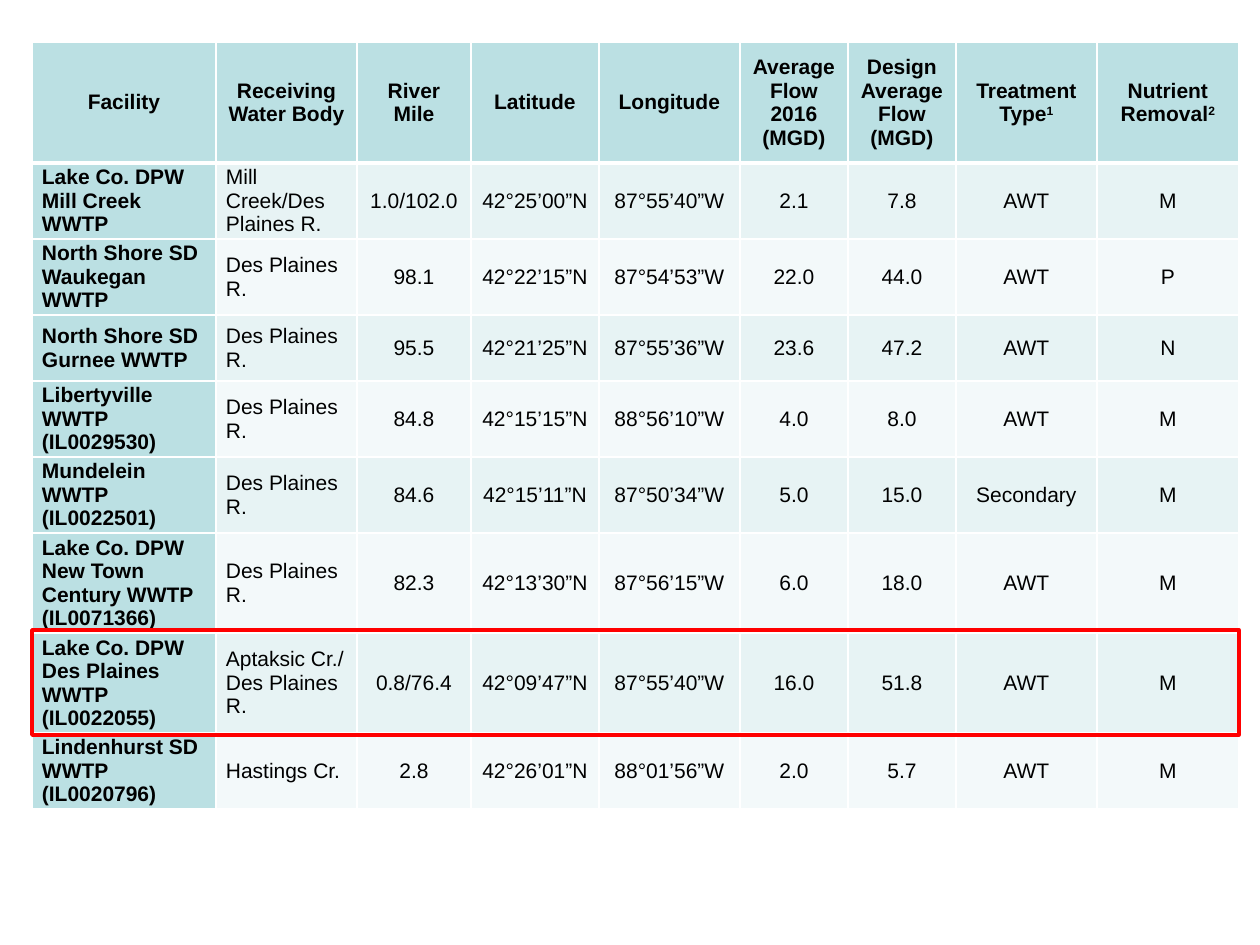
from typing import NamedTuple

from lxml import etree
from pptx import Presentation
from pptx import util as u
from pptx.dml.color import RGBColor
from pptx.enum import shapes, text
from pptx.oxml import ns

PX_PER_INCH = 126
LEFT, TOP = 32, 42
COLUMN_WIDTHS = [184, 141, 114, 128, 141, 108, 108, 141, 142]
ROW_HEIGHTS = [121, 76, 76, 66, 76, 76, 100, 100, 76]
TEAL, BANDS = "BBE0E3", ("E7F3F4", "F3F9FA")
WHITE, BLACK, RED = "FFFFFF", "000000", "FF0000"


class Heading(NamedTuple):
    label: str
    note: str = ""


class Facility(NamedTuple):
    name: str
    water_body: str
    river_mile: str
    latitude: str
    longitude: str
    average_flow: str
    design_flow: str
    treatment: str
    nutrient_removal: str


HEADINGS = [
    Heading("Facility"),
    Heading("Receiving Water Body"),
    Heading("River Mile"),
    Heading("Latitude"),
    Heading("Longitude"),
    Heading("Average Flow 2016 (MGD)"),
    Heading("Design Average Flow (MGD)"),
    Heading("Treatment Type", "1"),
    Heading("Nutrient Removal", "2"),
]
FACILITIES = [
    Facility("Lake Co. DPW Mill Creek WWTP", "Mill Creek/Des Plaines R.", "1.0/102.0",
             "42°25’00”N", "87°55’40”W", "2.1", "7.8", "AWT", "M"),
    Facility("North Shore SD Waukegan WWTP", "Des Plaines R.", "98.1",
             "42°22’15”N", "87°54’53”W", "22.0", "44.0", "AWT", "P"),
    Facility("North Shore SD Gurnee WWTP", "Des Plaines R.", "95.5",
             "42°21’25”N", "87°55’36”W", "23.6", "47.2", "AWT", "N"),
    Facility("Libertyville WWTP (IL0029530)", "Des Plaines R.", "84.8",
             "42°15’15”N", "88°56’10”W", "4.0", "8.0", "AWT", "M"),
    Facility("Mundelein WWTP (IL0022501)", "Des Plaines R.", "84.6",
             "42°15’11”N", "87°50’34”W", "5.0", "15.0", "Secondary", "M"),
    Facility("Lake Co. DPW New Town Century WWTP (IL0071366)", "Des Plaines R.", "82.3",
             "42°13’30”N", "87°56’15”W", "6.0", "18.0", "AWT", "M"),
    Facility("Lake Co. DPW Des Plaines WWTP (IL0022055)", "Aptaksic Cr./\nDes Plaines R.",
             "0.8/76.4", "42°09’47”N", "87°55’40”W", "16.0", "51.8", "AWT", "M"),
    Facility("Lindenhurst SD WWTP (IL0020796)", "Hastings Cr.", "2.8",
             "42°26’01”N", "88°01’56”W", "2.0", "5.7", "AWT", "M"),
]


def px(n: int) -> u.Emu:
    return u.Emu(round(n * u.Inches(1) / PX_PER_INCH))


def rgb(color: str) -> RGBColor:
    return RGBColor.from_string(color)


def set_borders(cell, bottom: int, top: int) -> None:
    """Draw white cell edges; top and bottom widths are in points."""
    tcPr = cell._tc.get_or_add_tcPr()
    for i, (side, width) in enumerate([("L", 1), ("R", 1), ("T", top), ("B", bottom)]):
        ln = etree.Element(ns.qn(f"a:ln{side}"), w=str(u.Pt(width)))
        fill = etree.SubElement(ln, ns.qn("a:solidFill"))
        etree.SubElement(fill, ns.qn("a:srgbClr"), val=WHITE)
        tcPr.insert(i, ln)


def format_cell(cell, fill: str, bold: bool, centred: bool) -> None:
    cell.fill.solid()
    cell.fill.fore_color.rgb = rgb(fill)
    cell.vertical_anchor = text.MSO_ANCHOR.MIDDLE
    cell.margin_left = cell.margin_right = px(10)
    cell.margin_top = cell.margin_bottom = 0
    for p in cell.text_frame.paragraphs:
        p.alignment = text.PP_ALIGN.CENTER if centred else text.PP_ALIGN.LEFT
        p.font.name = "Arial"
        p.font.size = u.Pt(12)
        p.font.bold = bold
        p.font.color.rgb = rgb(BLACK)


def add_heading(cell, heading: Heading) -> None:
    cell.text = heading.label
    if heading.note:
        r = cell.text_frame.paragraphs[0].add_run()
        r.text = heading.note
        r._r.get_or_add_rPr().set("baseline", "30000")
    format_cell(cell, TEAL, bold=True, centred=True)
    set_borders(cell, bottom=3, top=1)


def add_facility(cells, facility: Facility, row: int) -> None:
    for col, (cell, value) in enumerate(zip(cells, facility)):
        cell.text = value
        fill = TEAL if col == 0 else BANDS[(row - 1) % 2]
        format_cell(cell, fill, bold=col == 0, centred=col > 1)
        set_borders(cell, bottom=1, top=3 if row == 1 else 1)


def add_facility_table(s) -> None:
    table = s.shapes.add_table(
        len(ROW_HEIGHTS), len(COLUMN_WIDTHS), px(LEFT), px(TOP),
        px(sum(COLUMN_WIDTHS)), px(sum(ROW_HEIGHTS))).table
    table.first_row = table.horz_banding = False
    for column, width in zip(table.columns, COLUMN_WIDTHS):
        column.width = px(width)
    for row, height in zip(table.rows, ROW_HEIGHTS):
        row.height = px(height)
    for cell, heading in zip(table.rows[0].cells, HEADINGS):
        add_heading(cell, heading)
    for row, facility in enumerate(FACILITIES, start=1):
        add_facility(table.rows[row].cells, facility, row)


def add_highlight(s) -> None:
    sp = s.shapes.add_shape(shapes.MSO_SHAPE.RECTANGLE, px(LEFT), px(630),
                            px(sum(COLUMN_WIDTHS)), px(105))
    sp.shadow.inherit = False
    sp.fill.background()
    sp.line.color.rgb = rgb(RED)
    sp.line.width = u.Pt(2)


def main() -> None:
    prs = Presentation()
    prs.slide_width, prs.slide_height = u.Inches(10), u.Inches(7.5)
    s = prs.slides.add_slide(prs.slide_layouts[6])
    add_facility_table(s)
    add_highlight(s)
    prs.save("out.pptx")


if __name__ == "__main__":
    main()
